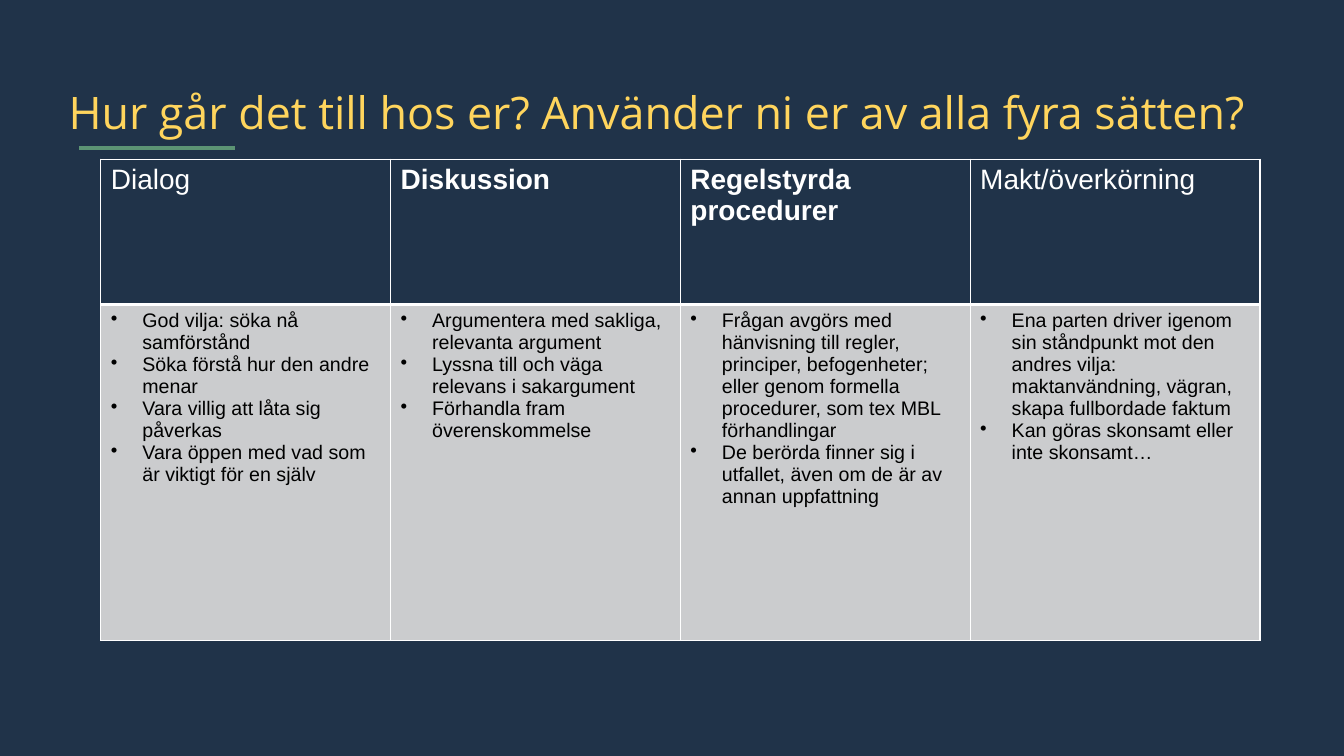
import pptx
import pptx.dml.color
import pptx.enum.shapes
import pptx.enum.text
import pptx.oxml
import pptx.oxml.ns
import pptx.util
from lxml import etree

Pt = pptx.util.Pt

TITLE = "Hur går det till hos er? Använder ni er av alla fyra sätten?"
# Heading, bold heading, points
WAYS = [
    ("Dialog", False, [
        "God vilja: söka nå samförstånd",
        "Söka förstå hur den andre menar",
        "Vara villig att låta sig påverkas",
        "Vara öppen med vad som är viktigt för en själv",
    ]),
    ("Diskussion", True, [
        "Argumentera med sakliga, relevanta argument",
        "Lyssna till och väga relevans i sakargument",
        "Förhandla fram överenskommelse",
    ]),
    ("Regelstyrda procedurer", True, [
        "Frågan avgörs med hänvisning till regler, principer, befogenheter; "
        "eller genom formella procedurer, som tex MBL förhandlingar",
        "De berörda finner sig i utfallet, även om de är av annan uppfattning",
    ]),
    ("Makt/överkörning", False, [
        "Ena parten driver igenom sin ståndpunkt mot den andres vilja: "
        "maktanvändning, vägran, skapa fullbordade faktum",
        "Kan göras skonsamt eller inte skonsamt…",
    ]),
]

NAVY, GREY, GREEN = "203349", "CBCCCE", "5C9474"
YELLOW, WHITE, BLACK = "FFD55D", "FFFFFF", "000000"
TABLE_LEFT, TABLE_TOP, COLUMN_WIDTH = 72, 113.8, 207
HEADING_HEIGHT, POINTS_HEIGHT = 103.8, 239.7
BULLET_INDENT = 22.5


def rgb(color):
    return pptx.dml.color.RGBColor.from_string(color)


def write(frame, lines, size, color, font="Arial", bold=False, bullets=False, spacing=None):
    """Fill a text frame with one paragraph per line."""
    frame.word_wrap = True
    for index, line in enumerate(lines):
        paragraph = frame.paragraphs[0] if index == 0 else frame.add_paragraph()
        if bullets:
            properties = paragraph._p.get_or_add_pPr()
            properties.set("marL", str(Pt(BULLET_INDENT)))
            properties.set("indent", str(-Pt(BULLET_INDENT)))
            bullet = etree.SubElement(properties, pptx.oxml.ns.qn("a:buChar"))
            bullet.set("char", "•")
        if spacing:
            paragraph.line_spacing = spacing
        run = paragraph.add_run()
        run.text = line
        run.font.name, run.font.size, run.font.bold = font, Pt(size), bold
        run.font.color.rgb = rgb(color)


def style_cell(cell, fill, top, bottom):
    """Set the fill, margins and white borders of a cell."""
    cell.fill.solid()
    cell.fill.fore_color.rgb = rgb(fill)
    cell.margin_left = cell.margin_right = Pt(7.2)
    cell.margin_top = cell.margin_bottom = Pt(3.6)
    widths = {"lnL": 1, "lnR": 1, "lnT": top, "lnB": bottom}
    for index, (side, width) in enumerate(widths.items()):
        border = pptx.oxml.parse_xml(
            f'<a:{side} {pptx.oxml.ns.nsdecls("a")} w="{Pt(width)}"><a:solidFill>'
            f'<a:srgbClr val="{WHITE}"/></a:solidFill></a:{side}>')
        cell._tc.get_or_add_tcPr().insert(index, border)


deck = pptx.Presentation()
deck.slide_width, deck.slide_height = Pt(960), Pt(540)
slide = deck.slides.add_slide(deck.slide_layouts[6])
slide.background.fill.solid()
slide.background.fill.fore_color.rgb = rgb(NAVY)

underline = slide.shapes.add_connector(
    pptx.enum.shapes.MSO_CONNECTOR.STRAIGHT, Pt(56.7), Pt(105.8), Pt(168.2), Pt(105.8))
underline.line.color.rgb = rgb(GREEN)
underline.line.width = Pt(3)
etree.SubElement(underline._element.spPr, pptx.oxml.ns.qn("a:effectLst"))

title = slide.shapes.add_textbox(Pt(49), Pt(26), Pt(864), Pt(73.4)).text_frame
title.margin_left = title.margin_right = title.margin_top = title.margin_bottom = 0
title.vertical_anchor = pptx.enum.text.MSO_ANCHOR.BOTTOM
write(title, [TITLE], size=32, color=YELLOW, font="Open Sans", spacing=0.9)

table = slide.shapes.add_table(
    2, len(WAYS), Pt(TABLE_LEFT), Pt(TABLE_TOP),
    Pt(COLUMN_WIDTH * len(WAYS)), Pt(HEADING_HEIGHT + POINTS_HEIGHT)).table
table.rows[0].height, table.rows[1].height = Pt(HEADING_HEIGHT), Pt(POINTS_HEIGHT)
for column, (heading, bold, points) in enumerate(WAYS):
    table.columns[column].width = Pt(COLUMN_WIDTH)
    heading_cell, points_cell = table.cell(0, column), table.cell(1, column)
    style_cell(heading_cell, NAVY, top=1, bottom=3)
    style_cell(points_cell, GREY, top=3, bottom=1)
    write(heading_cell.text_frame, [heading], size=20, color=WHITE, bold=bold)
    write(points_cell.text_frame, points, size=14, color=BLACK, bullets=True)

deck.save("out.pptx")
